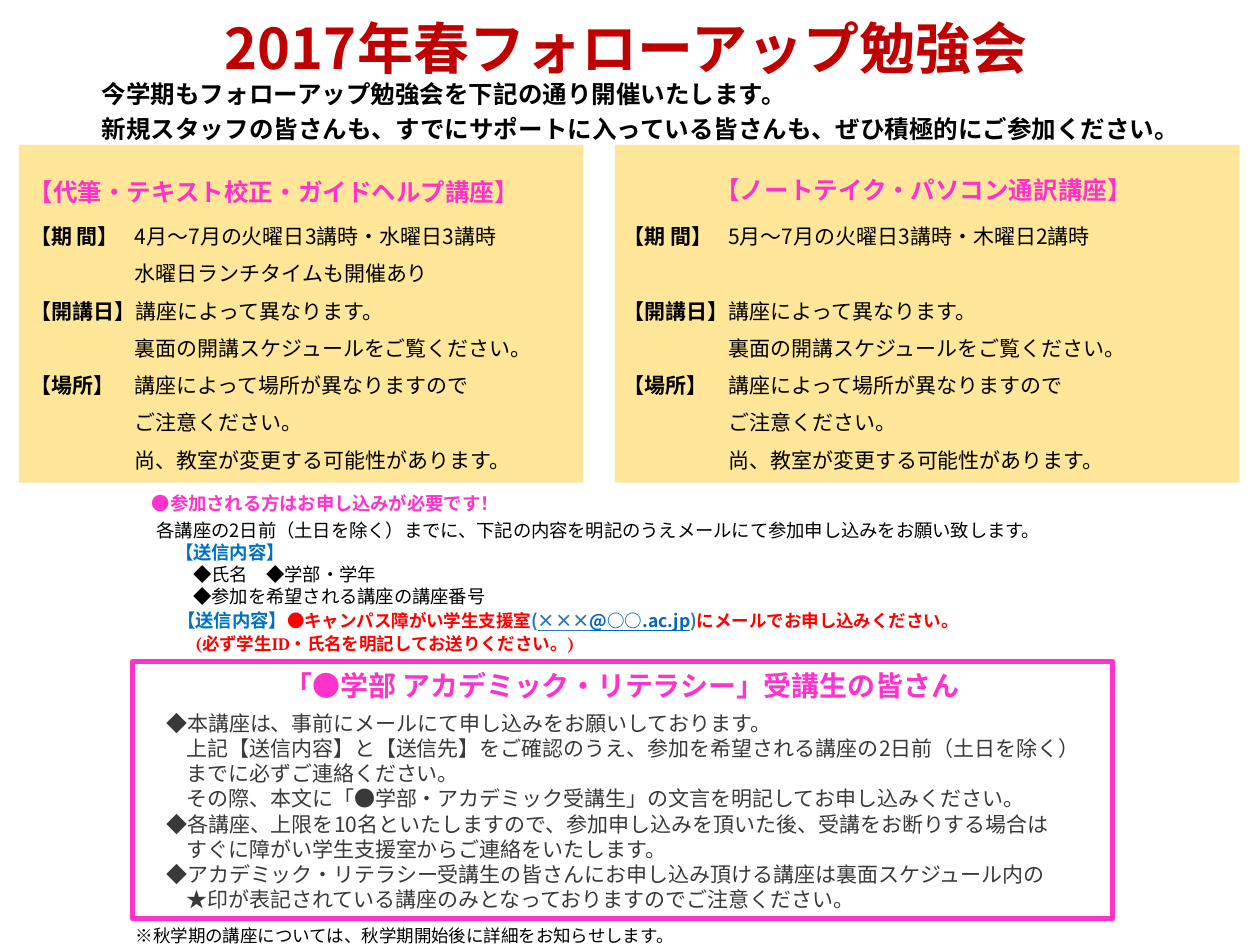
from pptx import Presentation
from pptx.dml.color import RGBColor
from pptx.enum.shapes import MSO_SHAPE
from pptx.enum.text import MSO_ANCHOR, PP_ALIGN
from pptx.oxml.ns import qn
from pptx.util import Inches, Pt
from lxml.etree import SubElement

GOTHIC, SERIF = "Noto Sans CJK JP", "Cambria"
COLORS = {"black": "000000", "title": "C00000", "panel": "FFE699", "pink": "FF33CC",
          "blue": "0070C0", "mail": "2E75B6", "link": "0563C1", "red": "FF0000",
          "gray": "3B3838"}

# Run formats
TITLE = {"size": 32, "bold": True, "color": "title"}
INTRO = {"size": 14, "bold": True}
HEADING = {"size": 14, "bold": True, "color": "pink"}
LABEL = {"size": 12, "bold": True}
BODY = {"size": 12}
APPLY = {"size": 10.5, "bold": True, "color": "pink"}
DETAIL = {"size": 10.5}
SEND = {"size": 10.5, "bold": True, "color": "blue"}
ALERT = {"size": 10, "bold": True, "color": "red", "latin": SERIF}
MAIL = {"size": 10, "bold": True, "color": "mail"}
FRAME_HEADING = {"size": 16, "bold": True, "color": "pink"}
FRAME_BODY = {"size": 12, "color": "gray"}
FOOTNOTE = {"size": 10}

# Content
TITLE_RUNS = [("2017年春", TITLE), ("フォローアップ勉強会", {**TITLE, "latin": SERIF})]
INTRO_LINES = ["今学期もフォローアップ勉強会を下記の通り開催いたします。",
               "新規スタッフの皆さんも、すでにサポートに入っている皆さんも、ぜひ積極的にご参加ください。"]
COMMON_ROWS = [("【開講日】", "講座によって異なります。"),
               ("", "裏面の開講スケジュールをご覧ください。"),
               ("【場所】", "講座によって場所が異なりますので"),
               ("", "ご注意ください。"),
               ("", "尚、教室が変更する可能性があります。")]
COURSES = [
    {"panel": (4.88, 1.15, 4.96, 2.68), "heading_box": (5.58, 1.28, 3.6, 0.4),
     "heading": "【ノートテイク・パソコン通訳講座】", "rows_box": (4.84, 1.43, 5.1, 2.4),
     "period": [("【期 間】", "5月～7月の火曜日3講時・木曜日2講時")]},
    {"panel": (0.15, 1.15, 4.48, 2.68), "heading_box": (0.13, 1.29, 5.98, 0.4),
     "heading": "【代筆・テキスト校正・ガイドヘルプ講座】", "rows_box": (0.13, 1.43, 5.77, 2.45),
     "period": [("【期 間】", "4月～7月の火曜日3講時・水曜日3講時"),
                ("", "水曜日ランチタイムも開催あり")]},
]
PERIOD_ROWS = 2
# Lines with their indent in characters
DETAILS = [
    (1, "各講座の2日前（土日を除く）までに、下記の内容を明記のうえメールにて参加申し込みをお願い致します。", DETAIL),
    (2, "【送信内容】", SEND),
    (3, "◆氏名　◆学部・学年", DETAIL),
    (3, "◆参加を希望される講座の講座番号", DETAIL),
]
CONTACT = [("【送信内容】", SEND), ("●キャンパス障がい学生支援室", ALERT), ("(", MAIL),
           ("×××", {**MAIL, "underline": True}),
           ("@○○.ac.jp", {**MAIL, "color": "link", "underline": True}),
           (")", MAIL), ("にメールでお申し込みください。", ALERT)]
CONTACT_NOTE = "(必ず学生ID・氏名を明記してお送りください。)"
FRAME_TITLE = "「●学部 アカデミック・リテラシー」受講生の皆さん"
FRAME_LINES = [
    "◆本講座は、事前にメールにて申し込みをお願いしております。",
    "上記【送信内容】と【送信先】をご確認のうえ、参加を希望される講座の2日前（土日を除く）",
    "までに必ずご連絡ください。",
    "その際、本文に「●学部・アカデミック受講生」の文言を明記してお申し込みください。",
    "◆各講座、上限を10名といたしますので、参加申し込みを頂いた後、受講をお断りする場合は",
    "すぐに障がい学生支援室からご連絡をいたします。",
    "◆アカデミック・リテラシー受講生の皆さんにお申し込み頂ける講座は裏面スケジュール内の",
    "★印が表記されている講座のみとなっておりますのでご注意ください。",
]


def color(name):
    return RGBColor.from_string(COLORS[name])


def add_run(paragraph, text, style):
    run = paragraph.add_run()
    run.text = text
    font = run.font
    values = {"bold": False, "underline": False, "color": "black", "latin": GOTHIC, **style}
    for key in ("bold", "underline"):
        setattr(font, key, values[key])
    font.size = Pt(values["size"])
    font.color.rgb = color(values["color"])
    font.name = values["latin"]
    SubElement(run.font._element, qn("a:ea")).set("typeface", GOTHIC)


def line(runs, margin=0, first=0, **settings):
    return {"runs": runs, "margin": margin, "first": first, "settings": settings}


def fill_text(shape, lines, insets=(0.1, 0.05, 0.1, 0.05), anchor=MSO_ANCHOR.TOP):
    frame = shape.text_frame
    frame.word_wrap = True
    frame.vertical_anchor = anchor
    for side, inset in zip(("left", "top", "right", "bottom"), insets):
        setattr(frame, f"margin_{side}", Inches(inset))
    for index, item in enumerate(lines):
        paragraph = frame.add_paragraph() if index else frame.paragraphs[0]
        properties = paragraph._p.get_or_add_pPr()
        properties.set("marL", str(Inches(item["margin"])))
        properties.set("indent", str(Inches(item["first"])))
        for key, value in {"alignment": PP_ALIGN.LEFT, **item["settings"]}.items():
            setattr(paragraph, key, value)
        for text, style in item["runs"]:
            add_run(paragraph, text, style)


def add_text(slide, box, lines, **options):
    fill_text(slide.shapes.add_textbox(*map(Inches, box)), lines, **options)


def add_rectangle(slide, box):
    rectangle = slide.shapes.add_shape(MSO_SHAPE.RECTANGLE, *map(Inches, box))
    rectangle.shadow.inherit = False
    return rectangle


def course_lines(course):
    row_height, label_width = Pt(21.3), 0.83
    lines = []
    for label, text in course["period"] + COMMON_ROWS:
        settings = {"line_spacing": row_height}
        if label == "【開講日】":
            settings["space_before"] = row_height * (PERIOD_ROWS - len(course["period"]))
        if label:
            gap = "" if label == "【開講日】" else "\t"  # the widest label fills its column
            runs = [(label + gap, LABEL), (text, BODY)]
        else:
            runs = [(text, BODY)]
        lines.append(line(runs, label_width, -label_width if label else 0, **settings))
    return lines


def main():
    prs = Presentation()
    prs.slide_width, prs.slide_height = Inches(10), Inches(7.5)
    slide = prs.slides.add_slide(prs.slide_layouts[5])

    # Course panels
    for course in COURSES:
        panel = add_rectangle(slide, course["panel"])
        panel.fill.solid()
        panel.fill.fore_color.rgb = color("panel")
        panel.line.fill.background()
    for course in COURSES:
        add_text(slide, course["rows_box"], course_lines(course), insets=(0.11, 0.25, 0.11, 0.01))
        add_text(slide, course["heading_box"],
                 [line([(course["heading"], HEADING)], line_spacing=Pt(21.3))])

    # Title and introduction
    title = slide.shapes.title
    for key, value in zip(("left", "top", "width", "height"), (0, 0.1, 9.94, 0.93)):
        setattr(title, key, Inches(value))
    fill_text(title, [line(TITLE_RUNS, alignment=PP_ALIGN.CENTER)], (0.11, 0.01, 0.11, 0.01))
    add_text(slide, (0.3, 0.53, 9.24, 0.66),
             [line([(text, INTRO)], first=0.41, line_spacing=Pt(20)) for text in INTRO_LINES])

    # How to apply
    character = 10.5 / 72
    add_text(slide, (0.67, 3.86, 3.44, 0.28),
             [line([("●参加される方はお申し込みが必要です！", APPLY)], 3 * character)])
    add_text(slide, (1, 4.07, 7.51, 0.81),
             [line([(text, style)], indent * character) for indent, text, style in DETAILS])
    add_text(slide, (1.31, 4.78, 7.53, 0.47),
             [line(CONTACT, line_spacing=Pt(13)),
              line([(CONTACT_NOTE, ALERT)], 0.14, line_spacing=Pt(13))])

    # Framed notice
    notice = add_rectangle(slide, (1.05, 5.25, 7.78, 2.04))
    notice.fill.background()
    notice.line.color.rgb = color("pink")
    notice.line.width = Pt(3)
    fill_text(notice, [line([(FRAME_TITLE, FRAME_HEADING)], 1.11, space_after=Pt(5))] +
              [line([(text, FRAME_BODY)], 0.17 if text.startswith("◆") else 0.33)
               for text in FRAME_LINES], anchor=MSO_ANCHOR.MIDDLE)

    # Footnote
    add_text(slide, (0.98, 7.29, 6.4, 0.27),
             [line([("※秋学期の講座については、秋学期開始後に詳細をお知らせします。", FOOTNOTE)])])
    prs.save("out.pptx")


if __name__ == "__main__":
    main()
